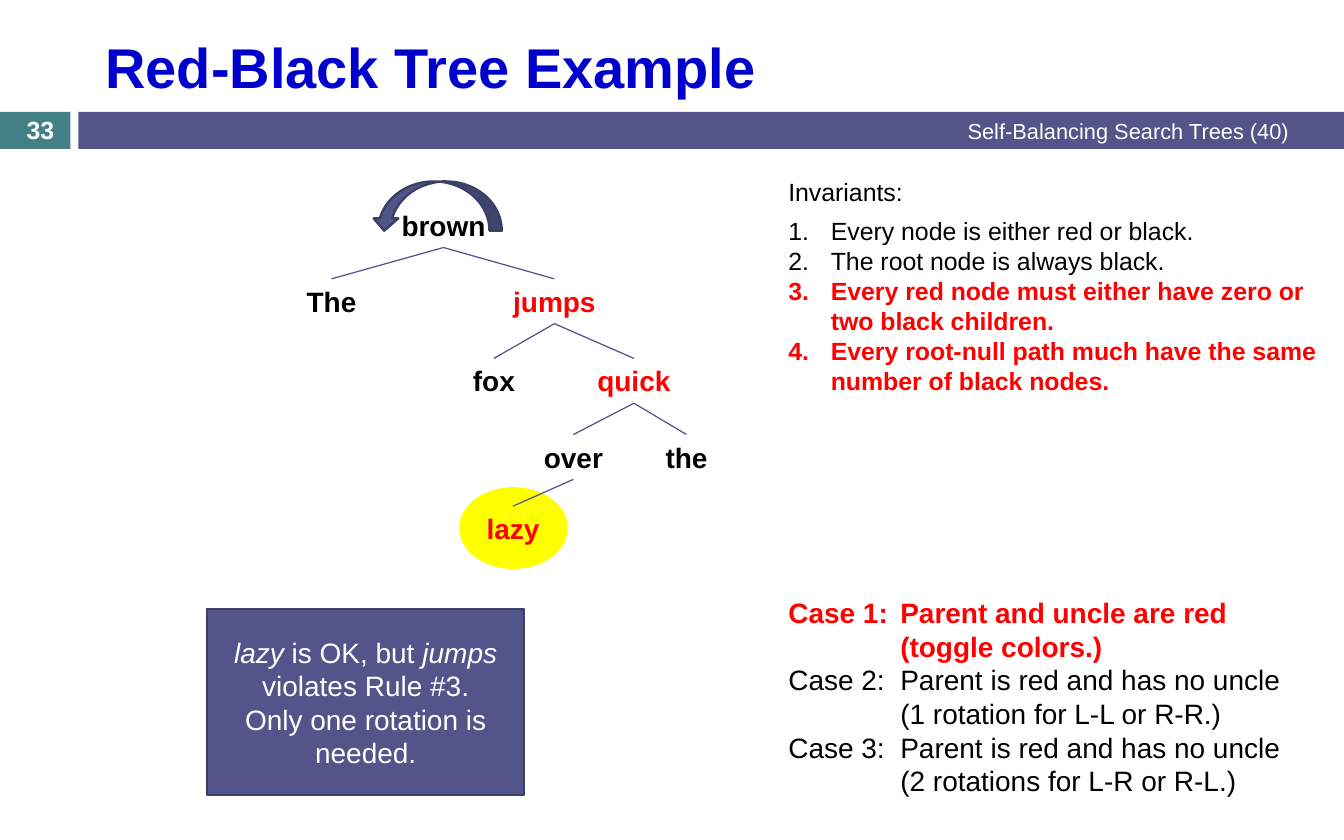
import pptx
import pptx.dml.color
import pptx.enum.shapes
import pptx.enum.text
import pptx.oxml.ns
import pptx.util
from dataclasses import dataclass
from lxml import etree

Inches = pptx.util.Inches
Pt = pptx.util.Pt
SHAPE = pptx.enum.shapes.MSO_SHAPE
ALIGN = pptx.enum.text.PP_ALIGN
ANCHOR = pptx.enum.text.MSO_ANCHOR
qn = pptx.oxml.ns.qn


@dataclass(frozen=True)
class Theme:
    font: str = "Arial"
    title: int = 36
    body: int = 18
    small: int = 16
    footer: int = 14
    black: str = "000000"
    white: str = "FFFFFF"
    red: str = "FF0000"
    blue: str = "0000CC"
    yellow: str = "FFFF00"
    teal: str = "438086"
    indigo: str = "53548A"
    outline: str = "3D3E66"


def rgb(value):
    return pptx.dml.color.RGBColor.from_string(value)


class SlideBuilder:
    def __init__(self, slide, theme):
        self.s = slide
        self.t = theme

    def shape(self, kind, box, fill, line=None):
        sp = self.s.shapes.add_shape(kind, *map(Inches, box))
        sp.shadow.inherit = False
        sp.fill.solid()
        sp.fill.fore_color.rgb = rgb(fill)
        if line:
            sp.line.color.rgb = rgb(line)
            sp.line.width = Pt(1.5)
        else:
            sp.line.fill.background()
        return sp

    def text_box(self, box):
        return self.s.shapes.add_textbox(*map(Inches, box))

    def set_text(self, sp, lines, size, color, bold=False, align=ALIGN.LEFT, anchor=ANCHOR.TOP):
        tf = sp.text_frame
        tf.word_wrap = True
        tf.vertical_anchor = anchor
        tf.text = "\n".join(lines)
        for p in tf.paragraphs:
            p.alignment = align
            self.style(p, size, color, bold)
        return tf

    def style(self, p, size, color, bold=False):
        for r in p.runs:
            r.font.name = self.t.font
            r.font.size = Pt(size)
            r.font.bold = bold
            r.font.color.rgb = rgb(color)

    def hang(self, p, indent, numbered=False):
        pPr = p._p.get_or_add_pPr()
        pPr.set("marL", str(Inches(indent)))
        pPr.set("indent", str(-Inches(indent)))
        if numbered:
            etree.SubElement(pPr, qn("a:buAutoNum"), type="arabicPeriod")

    def edge(self, start, end):
        line = self.s.shapes.add_connector(
            pptx.enum.shapes.MSO_CONNECTOR.STRAIGHT, *map(Inches, (*start, *end)))
        line.line.color.rgb = rgb(self.t.indigo)
        line.line.width = Pt(0.79)
        etree.SubElement(line._element.spPr, qn("a:effectLst"))


# Tree: word -> (centre x, top y, colour, parent)
NODE_W, NODE_H = 1.42, 0.4
LEVELS = [1.81, 2.49, 3.2, 3.88, 4.52]
TREE = {
    "brown": (3.96, LEVELS[0], Theme.black, None),
    "jumps": (4.95, LEVELS[1], Theme.red, "brown"),
    "The": (2.96, LEVELS[1], Theme.black, "brown"),
    "fox": (4.41, LEVELS[2], Theme.black, "jumps"),
    "quick": (5.66, LEVELS[2], Theme.red, "jumps"),
    "over": (5.12, LEVELS[3], Theme.black, "quick"),
    "the": (6.13, LEVELS[3], Theme.black, "quick"),
    "lazy": (4.58, LEVELS[4], Theme.red, "over"),
}
INVARIANTS = [
    "Invariants:",
    "Every node is either red or black.",
    "The root node is always black.",
    "Every red node must either have zero or two black children.",
    "Every root-null path much have the same number of black nodes.",
]
CASES = [
    "Case 1:\tParent and uncle are red",
    "\t(toggle colors.)",
    "Case 2:\tParent is red and has no uncle",
    "\t(1 rotation for L-L or R-R.)",
    "Case 3:\tParent is red and has no uncle",
    "\t(2 rotations for L-R or R-L.)",
]


def main():
    prs = pptx.Presentation()
    prs.slide_width, prs.slide_height = Inches(12), Inches(7.5)
    t = Theme()
    b = SlideBuilder(prs.slides.add_slide(prs.slide_layouts[6]), t)

    # Header band
    b.shape(SHAPE.RECTANGLE, (0, 1, 0.63, 0.33), t.teal)
    b.shape(SHAPE.RECTANGLE, (0.7, 1, 11.3, 0.33), t.indigo)
    b.set_text(b.text_box((4.5, 0.99, 7.11, 0.35)), ["Self-Balancing Search Trees (40)"],
               t.footer, t.white, align=ALIGN.RIGHT, anchor=ANCHOR.MIDDLE)
    b.set_text(b.text_box((0, 1.01, 0.72, 0.3)), ["33"], t.small, t.white, True,
               ALIGN.CENTER, ANCHOR.MIDDLE)
    tf = b.set_text(b.text_box((0.7, 0.19, 10.91, 0.8)), ["Red-Black Tree Example"],
                    t.title, t.blue, True, anchor=ANCHOR.MIDDLE)
    tf.margin_left = Inches(0.24)

    # Tree with the new node highlighted
    b.shape(SHAPE.OVAL, (4.1, 4.35, 0.97, 0.73), t.yellow)
    for word, (x, y, color, parent) in TREE.items():
        b.set_text(b.text_box((x - NODE_W / 2, y, NODE_W, NODE_H)), [word],
                   t.body, color, True, ALIGN.CENTER)
        if parent:
            px, py = TREE[parent][:2]
            b.edge((px, py + NODE_H), (x, y))

    # Rotation arrow over the root
    arrow = b.shape(SHAPE.CURVED_UP_ARROW, (3.32, 1.62, 1.16, 0.44), t.indigo, t.outline)
    arrow.rotation = 180

    # Comment box, with node names in italics
    note = b.shape(SHAPE.RECTANGLE, (1.85, 5.44, 2.83, 1.66), t.indigo, t.outline)
    tf = b.set_text(note, ["", "Only one rotation is needed."], t.body, t.white,
                    align=ALIGN.CENTER, anchor=ANCHOR.MIDDLE)
    p = tf.paragraphs[0]
    for i, part in enumerate(["lazy", " is OK, but ", "jumps", " violates Rule #3."]):
        r = p.add_run()
        r.text = part
        r.font.italic = i % 2 == 0
    b.style(p, t.body, t.white)

    # Invariants, the last two in red
    sp = b.shape(SHAPE.RECTANGLE, (6.94, 1.53, 4.95, 2.07), t.white)
    rules = b.set_text(sp, INVARIANTS, t.small, t.black).paragraphs[1:]
    rules[0].space_before = Pt(6)
    for p in rules:
        b.hang(p, 0.38, numbered=True)
    for p in rules[2:]:
        b.style(p, t.small, t.red, True)

    # Cases, the first one in red
    sp = b.shape(SHAPE.RECTANGLE, (6.94, 5.27, 4.95, 1.92), t.white)
    cases = b.set_text(sp, CASES, t.body, t.black).paragraphs
    for p in cases:
        b.hang(p, 1)
    for p in cases[:2]:
        b.style(p, t.body, t.red, True)

    prs.save("out.pptx")


if __name__ == "__main__":
    main()
